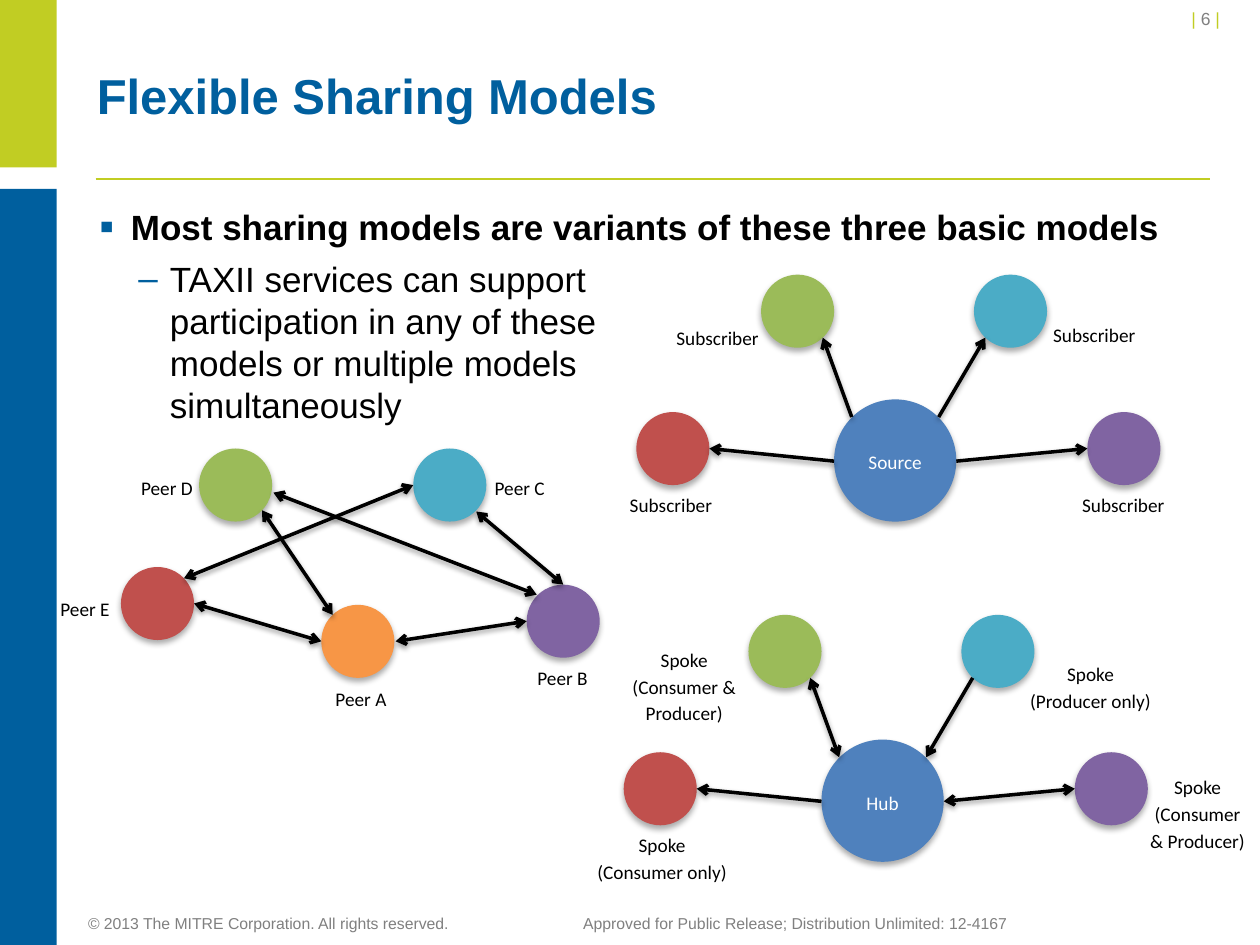
from typing import NamedTuple

from lxml.etree import SubElement
from pptx import Presentation
from pptx.dml.color import RGBColor
from pptx.enum.shapes import MSO_CONNECTOR as CONN, MSO_SHAPE as SHAPE
from pptx.enum.text import MSO_ANCHOR as ANCHOR, PP_ALIGN as ALIGN
from pptx.oxml.ns import qn
from pptx.util import Inches, Pt

COLORS = {
    "lime": "C1CD23", "navy": "005F9E", "gray": "808080", "black": "000000",
    "white": "FFFFFF", "blue": "4F81BD", "green": "9BBB59", "purple": "8064A2",
    "red": "C0504D", "teal": "4BACC6", "orange": "F79646",
}
LABEL = {"alignment": ALIGN.CENTER, "line_spacing": 1.15, "space_after": Pt(10)}
BODY = {"line_spacing": Pt(24), "space_after": Pt(6)}
NODE, CENTER = 0.58, 0.97


class Node(NamedTuple):
    color: str
    x: float
    y: float
    size: float = NODE
    text: str = ""


class Label(NamedTuple):
    text: str
    x: float
    y: float
    w: float = 1.05
    h: float = 0.28


class Link(NamedTuple):
    x1: float
    y1: float
    x2: float
    y2: float
    ends: tuple = ("headEnd", "tailEnd")


class Bullet(NamedTuple):
    char: str
    left: float
    size: int


def rgb(name: str) -> RGBColor:
    return RGBColor.from_string(COLORS[name])


def style(p, fmt: dict, font: str, size: float, color: str, bold: bool = False) -> None:
    for key, value in fmt.items():
        setattr(p, key, value)
    for r in p.runs:
        for key, value in {"name": font, "size": Pt(size), "bold": bold}.items():
            setattr(r.font, key, value)
        r.font.color.rgb = rgb(color)


def add_shadow(s, alpha: int, blur: float, dist: float) -> None:
    props = s._element.spPr
    effects = props.find(qn("a:effectLst"))
    if effects is None:
        effects = SubElement(props, qn("a:effectLst"))
    shadow = SubElement(effects, qn("a:outerShdw"), blurRad=str(Pt(blur)),
                        dist=str(Pt(dist)), dir="5400000", rotWithShape="0")
    color = SubElement(shadow, qn("a:srgbClr"), val=COLORS["black"])
    SubElement(color, qn("a:alpha"), val=str(alpha * 1000))


def add_shape(shapes, kind, x: float, y: float, w: float, h: float, color: str):
    s = shapes.add_shape(kind, *map(Inches, (x, y, w, h)))
    s.shadow.inherit = False
    s.fill.solid()
    s.fill.fore_color.rgb = rgb(color)
    s.line.fill.background()
    return s


def add_line(shapes, link: Link, color: str, width: float):
    s = shapes.add_connector(CONN.STRAIGHT, *map(Inches, link[:4]))
    s.line.color.rgb = rgb(color)
    s.line.width = Pt(width)
    SubElement(s._element.spPr, qn("a:effectLst"))
    return s


def add_text(shapes, x: float, y: float, w: float, h: float, anchor=ANCHOR.TOP):
    tf = shapes.add_textbox(*map(Inches, (x, y, w, h))).text_frame
    tf.word_wrap = True
    tf.vertical_anchor = anchor
    return tf


def add_bullet(p, bullet: Bullet) -> None:
    props = p._p.get_or_add_pPr()
    props.set("marL", str(Inches(bullet.left)))
    props.set("indent", str(Inches(-0.25)))
    color = SubElement(props, qn("a:buClr"))
    SubElement(color, qn("a:srgbClr"), val=COLORS["navy"])
    SubElement(props, qn("a:buSzPct"), val=str(bullet.size * 1000))
    SubElement(props, qn("a:buFont"), typeface="Arial")
    SubElement(props, qn("a:buChar"), char=bullet.char)


def add_model(slide, nodes: list[Node], labels: list[Label], links: list[Link]) -> None:
    shapes = slide.shapes.add_group_shape().shapes
    for node in nodes:
        s = add_shape(shapes, SHAPE.OVAL, node.x, node.y, node.size, node.size, node.color)
        add_shadow(s, 32, 3.5, 2.2)
        if node.text:
            s.text_frame.vertical_anchor = ANCHOR.MIDDLE
            p = s.text_frame.paragraphs[0]
            p.text = node.text
            style(p, LABEL, "Calibri", 11, "white")
    for label in labels:
        p = add_text(shapes, *label[1:]).paragraphs[0]
        p.text = label.text
        style(p, LABEL, "Calibri", 11, "black")
    for link in links:
        s = add_line(shapes, link, "black", 2)
        for end in link.ends:
            SubElement(s.line._get_or_add_ln(), qn(f"a:{end}"), type="arrow")
        add_shadow(s, 38, 3.1, 1.6)


def add_star(slide, x: float, y: float, center: str, labels: list[Label], ends: list[tuple]) -> None:
    nodes = [Node("blue", x, y, CENTER, center), Node("green", x - 0.58, y - 0.99),
             Node("purple", x + 2.01, y + 0.1), Node("red", x - 1.57, y + 0.1),
             Node("teal", x + 1.11, y - 0.99)]
    spans = [(-0.99, 0.39, 0, 0.49), (-0.09, -0.49, 0.14, 0.14),
             (1.2, -0.49, 0.83, 0.14), (CENTER, 0.49, 2.01, 0.39)]
    links = [Link(x + x1, y + y1, x + x2, y + y2, e)
             for (x1, y1, x2, y2), e in zip(spans, ends)]
    add_model(slide, nodes, labels, links)


def add_frame(slide) -> None:
    shapes = slide.shapes
    add_shape(shapes, SHAPE.RECTANGLE, 0, 0, 0.45, 1.33, "lime")
    add_shape(shapes, SHAPE.RECTANGLE, 0, 1.5, 0.45, 6, "navy")
    add_line(shapes, Link(0.76, 1.42, 9.6, 1.42), "lime", 1)

    p = add_text(shapes, 0.6, 7.15, 7.58, 0.3, ANCHOR.BOTTOM).paragraphs[0]
    tabs = SubElement(p._p.get_or_add_pPr(), qn("a:tabLst"))
    SubElement(tabs, qn("a:tab"), pos=str(Inches(3.93)), algn="l")
    p.text = ("© 2013 The MITRE Corporation. All rights reserved.\t"
              "Approved for Public Release; Distribution Unlimited: 12-4167")
    style(p, {"line_spacing": Pt(13)}, "Arial", 9, "gray")

    p = add_text(shapes, 9.24, 0.08, 0.54, 0.2, ANCHOR.BOTTOM).paragraphs[0]
    for text in ("| ", "6 ", "|"):
        p.add_run().text = text
    style(p, {"alignment": ALIGN.RIGHT}, "Arial", 10, "lime")
    p.runs[1].font.color.rgb = rgb("gray")

    p = add_text(shapes, 0.67, 0.25, 9, 1.03, ANCHOR.MIDDLE).paragraphs[0]
    p.text = "Flexible Sharing Models"
    style(p, {"line_spacing": Pt(32)}, "Arial", 28, "navy", True)


def add_body(slide) -> None:
    tf = add_text(slide.shapes, 0.69, 1.58, 8.88, 5.12)
    first, second = tf.paragraphs[0], tf.add_paragraph()
    first.text = "Most sharing models are variants of these three basic models"
    second.text = ("TAXII services can support\vparticipation in any of these\v"
                   "models or multiple models\vsimultaneously")
    second.level = 1
    add_bullet(first, Bullet("▪", 0.25, 120))
    add_bullet(second, Bullet("–", 0.56, 100))
    style(first, BODY, "Arial", 20, "black", True)
    style(second, BODY, "Arial", 20, "black")


def main() -> None:
    """Build the sharing models slide."""
    prs = Presentation()
    prs.slide_width, prs.slide_height = Inches(10), Inches(7.5)
    slide = prs.slides.add_slide(prs.slide_layouts[6])
    add_frame(slide)
    add_body(slide)
    head, tail, both = ("headEnd",), ("tailEnd",), ("headEnd", "tailEnd")
    spots = [(4.8, 3.84), (5.17, 2.51), (8.16, 2.49), (8.39, 3.84)]
    add_star(slide, 6.62, 3.17, "Source", [Label("Subscriber", *spot) for spot in spots],
             [head, head, head, tail])
    add_model(
        slide,
        [Node("green", 1.58, 3.56), Node("purple", 4.18, 4.64), Node("red", 0.96, 4.5),
         Node("teal", 3.28, 3.56), Node("orange", 2.55, 4.8)],
        [Label("Peer E", 0.15, 4.66), Label("Peer D", 0.8, 3.7), Label("Peer C", 3.6, 3.7),
         Label("Peer B", 3.94, 5.21), Label("Peer A", 2.34, 5.38)],
        [Link(1.54, 4.79, 2.55, 5.09), Link(1.46, 4.59, 3.28, 3.85), Link(2.08, 4.05, 2.64, 4.88),
         Link(4.18, 4.93, 3.14, 5.09), Link(2.17, 3.91, 4.26, 4.72), Link(3.78, 4.06, 4.47, 4.64)])
    add_star(slide, 6.52, 5.87, "Hub",
             [Label("Spoke\v(Consumer only)", 4.54, 6.54, 1.43, 0.56),
              Label("Spoke\v(Consumer & Producer)", 4.74, 5.07, 1.38, 0.67),
              Label("Spoke\v(Producer only)", 8.06, 5.18, 1.19, 0.55),
              Label("Spoke\v(Consumer & Producer)", 9.01, 6.08, 0.99, 0.75)],
             [head, both, tail, both])
    prs.save("out.pptx")


if __name__ == "__main__":
    main()
